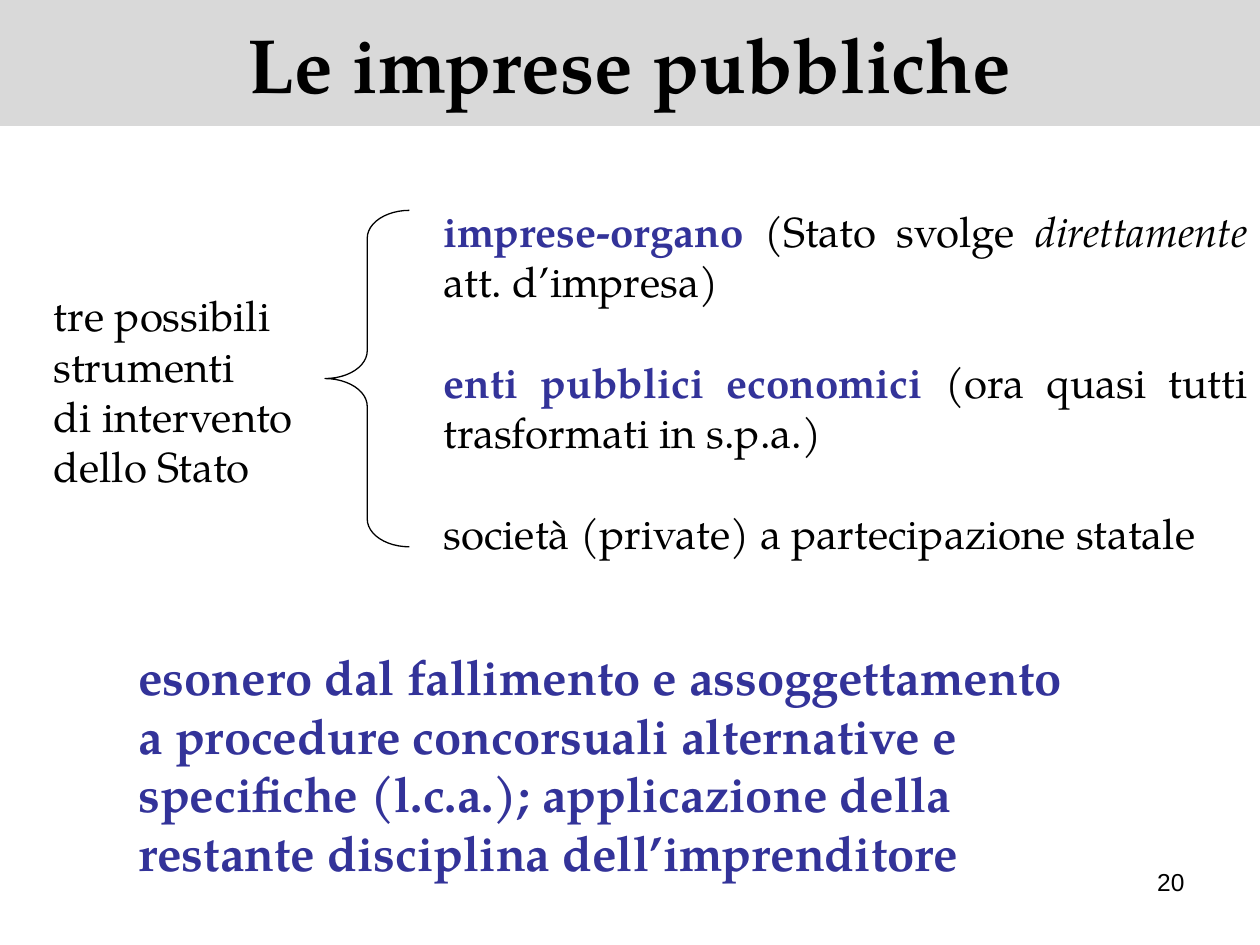
from pptx import Presentation, util as u
from pptx.dml.color import RGBColor as Rgb
from pptx.enum import shapes, text
from pptx.oxml.ns import qn

Inches, Pt = u.Inches, u.Pt
AL, AN = text.PP_ALIGN, text.MSO_ANCHOR

theme = {
    "serif": "TeX Gyre Pagella", "sans": "Arial",
    "black": Rgb(0, 0, 0), "blue": Rgb(0x33, 0x33, 0x99),
    "band": Rgb(0xD9, 0xD9, 0xD9),
    "head": Pt(44), "large": Pt(28), "text": Pt(24), "small": Pt(14),
}
plain = {"name": theme["serif"], "size": theme["text"], "bold": False, "italic": False}
strong = {**plain, "bold": True}


def place(shape, left, top, width, height):
    for key, val in zip(("left", "top", "width", "height"), (left, top, width, height)):
        setattr(shape, key, Inches(val))


def write(shape, paras, align=AL.LEFT, anchor=AN.TOP, gap=0):
    """Each paragraph is a list of (words, format, colour) runs."""
    frame = shape.text_frame
    frame.word_wrap = True
    frame.auto_size = text.MSO_AUTO_SIZE.NONE
    frame.vertical_anchor = anchor
    for num, runs in enumerate(paras):
        para = frame.add_paragraph() if num else frame.paragraphs[0]
        para.alignment = align
        para.space_before = Pt(gap if num else 0)
        for words, form, color in runs:
            run = para.add_run()
            run.text = words
            for key, val in form.items():
                setattr(run.font, key, val)
            run.font.color.rgb = theme[color]


deck = Presentation()
deck.slide_width, deck.slide_height = Inches(10), Inches(7.5)
slide = deck.slides.add_slide(deck.slide_layouts[1])
parts = slide.shapes

# Title band
title = parts.title
place(title, 0, 0, 10, 1)
title.fill.solid()
title.fill.fore_color.rgb = theme["band"]
write(title, [[("Le imprese pubbliche", {**strong, "size": theme["head"]}, "black")]],
      AL.CENTER, AN.MIDDLE)

# List of the three tools, one blank line's height apart
tools = slide.placeholders[1]
place(tools, 3.42, 1.58, 6.58, 2.9)
write(tools, [
    [("imprese-organo", strong, "blue"), (" (Stato svolge ", plain, "black"),
     ("direttamente", {**plain, "italic": True}, "black"),
     (" att. d’impresa)", plain, "black")],
    [("enti pubblici economici", strong, "blue"),
     (" (ora quasi tutti trasformati in s.p.a.)", plain, "black")],
    [("società (private) a partecipazione statale", plain, "black")],
], AL.JUSTIFY, gap=28.8)
for para in tools.text_frame.paragraphs:
    props = para._p.get_or_add_pPr()
    props.set("marL", "0")
    props.set("indent", "0")
    props.append(props.makeelement(qn("a:buNone"), {}))

# Brace
brace = parts.add_shape(shapes.MSO_SHAPE.LEFT_BRACE, Inches(2.58), Inches(1.67),
                        Inches(0.67), Inches(2.67))
brace.adjustments[0] = 0.33
brace.shadow.inherit = False
brace.fill.background()
brace.line.color.rgb = theme["black"]
brace.line.width = Pt(0.75)

# Free text: lead-in, conclusion, page number
large = {**strong, "size": theme["large"]}
small = {"name": theme["sans"], "size": theme["small"]}
notes = [
    ((0.33, 2.25, 2.33, 1.7), ["tre possibili strumenti", "di intervento dello Stato"],
     plain, "black", AL.LEFT),
    ((1, 5.08, 7.58, 1.97),
     ["esonero dal fallimento e assoggettamento a procedure concorsuali alternative e "
      "specifiche (l.c.a.); applicazione della restante disciplina dell’imprenditore"],
     large, "blue", AL.LEFT),
    ((7.17, 6.83, 2.33, 0.52), ["20"], small, "black", AL.RIGHT),
]
for box, lines, form, color, align in notes:
    write(parts.add_textbox(*map(Inches, box)),
          [[(line, form, color)] for line in lines], align)

deck.save("out.pptx")
